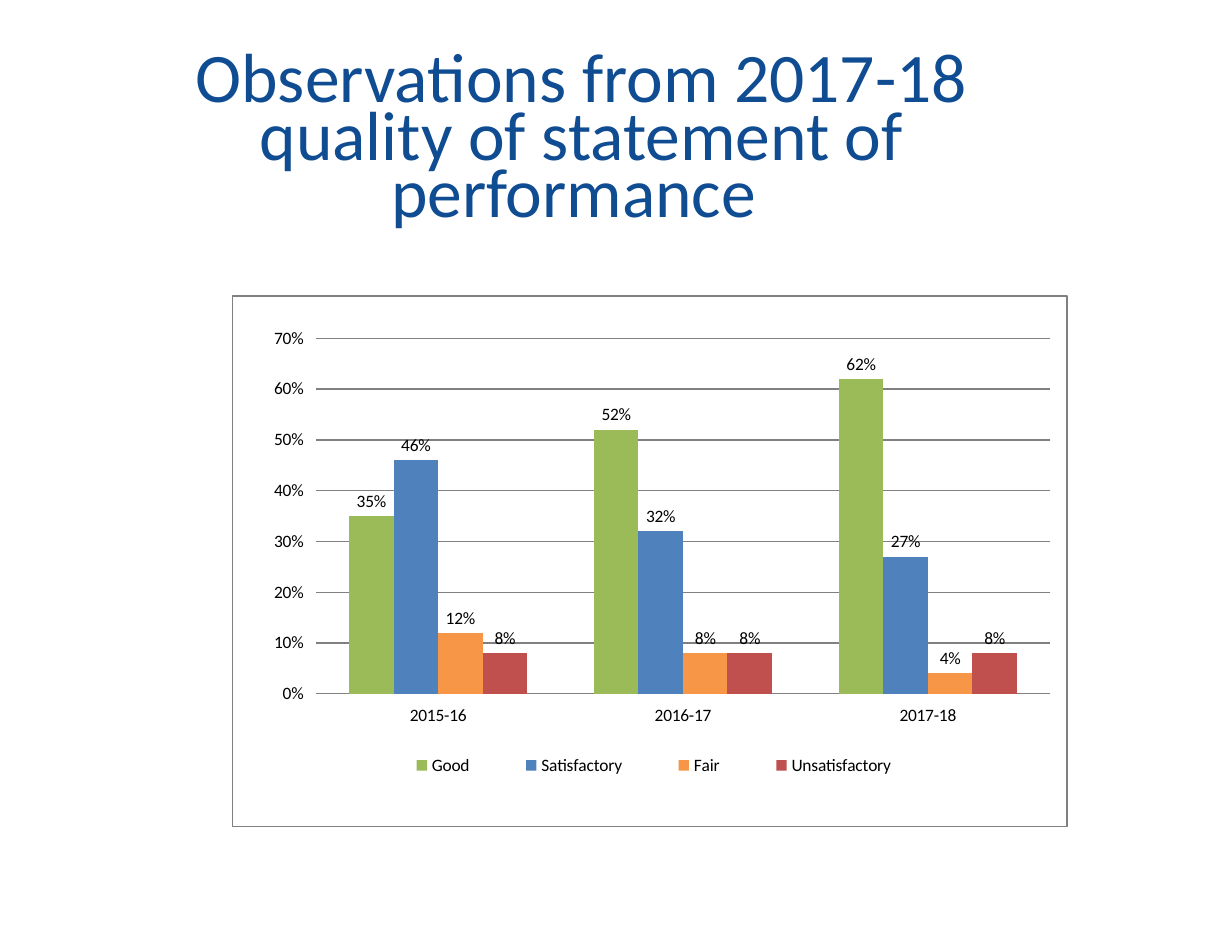
from lxml.etree import fromstring
from pptx import Presentation
from pptx.chart.data import CategoryChartData
from pptx.dml.color import RGBColor
from pptx.enum.chart import XL_CHART_TYPE, XL_LABEL_POSITION, XL_LEGEND_POSITION, XL_TICK_MARK
from pptx.enum.text import MSO_ANCHOR, MSO_AUTO_SIZE, PP_ALIGN
from pptx.oxml.ns import nsdecls
from pptx.util import Inches, Pt


def write_text(frame, text, size, color, line_spacing, space_after):
    frame.text = text
    paragraph = frame.paragraphs[0]
    paragraph.alignment = PP_ALIGN.CENTER
    paragraph.line_spacing = Pt(line_spacing)
    paragraph.space_before = Pt(0)
    paragraph.space_after = Pt(space_after)
    for run in paragraph.runs:
        run.font.name = "Calibri"
        run.font.size = Pt(size)
        run.font.color.rgb = RGBColor.from_string(color)


def manual_layout(x, y, w, h, target=""):
    return fromstring(
        f'<c:layout {nsdecls("c")}><c:manualLayout>{target}'
        '<c:xMode val="edge"/><c:yMode val="edge"/>'
        f'<c:x val="{x}"/><c:y val="{y}"/><c:w val="{w}"/><c:h val="{h}"/>'
        '</c:manualLayout></c:layout>'
    )


presentation = Presentation()
presentation.slide_width = Inches(25 / 2.54)
presentation.slide_height = Inches(19 / 2.54)
slide = presentation.slides.add_slide(presentation.slide_layouts[5])

title = slide.shapes.title
title.left, title.top = Inches(0.67), Inches(0.42)
title.width, title.height = Inches(7.95), Inches(1.51)
heading = title.text_frame
heading.word_wrap = True
heading.auto_size = MSO_AUTO_SIZE.SHAPE_TO_FIT_TEXT
heading.vertical_anchor = MSO_ANCHOR.TOP
heading.margin_left = heading.margin_right = Inches(0.09)
heading.margin_top = heading.margin_bottom = Inches(0.05)
write_text(heading, "Observations from 2017-18\vquality of statement of performance ",
           size=40, color="0F4C92", line_spacing=33.1, space_after=14.8)

ratings = [
    ("Good", (0.35, 0.52, 0.62), "9BBB59"),
    ("Satisfactory", (0.46, 0.32, 0.27), "4F81BD"),
    ("Fair", (0.12, 0.08, 0.04), "F79646"),
    ("Unsatisfactory", (0.08, 0.08, 0.08), "C0504D"),
]
rating_data = CategoryChartData(number_format="0%")
rating_data.categories = ["2015-16", "2016-17", "2017-18"]
for rating, shares, color in ratings:
    rating_data.add_series(rating, shares)
chart = slide.shapes.add_chart(
    XL_CHART_TYPE.COLUMN_CLUSTERED, Inches(1.85), Inches(2.36), Inches(6.68), Inches(4.25), rating_data
).chart
chart.has_title = False
chart.font.name = "Calibri"
chart.font.size = Pt(10)
chart.font.color.rgb = RGBColor.from_string("000000")

columns = chart.plots[0]
columns.gap_width = 150
columns.overlap = 0
columns.vary_by_categories = False
for series, (rating, shares, color) in zip(columns.series, ratings):
    series.format.fill.solid()
    series.format.fill.fore_color.rgb = RGBColor.from_string(color)
    labels = series.data_labels
    labels.show_value = True
    labels.number_format = "0%"
    labels.number_format_is_linked = False
    labels.position = XL_LABEL_POSITION.OUTSIDE_END

for axis in (chart.category_axis, chart.value_axis):
    axis.major_tick_mark = XL_TICK_MARK.OUTSIDE
    axis.minor_tick_mark = XL_TICK_MARK.NONE
    axis.format.line.fill.background()
share_axis = chart.value_axis
share_axis.minimum_scale = 0
share_axis.maximum_scale = 0.7
share_axis.major_unit = 0.1
share_axis.tick_labels.number_format = "0%"
share_axis.tick_labels.number_format_is_linked = False
share_axis.has_major_gridlines = True
gridline = share_axis.major_gridlines.format.line
gridline.width = Pt(0.75)
gridline.color.rgb = RGBColor.from_string("808080")

chart.has_legend = True
chart.legend.position = XL_LEGEND_POSITION.RIGHT
chart.legend.include_in_layout = False

chart_space = chart.element
for layout in chart_space.xpath("c:chart/c:plotArea/c:layout | c:chart/c:legend/c:layout"):
    layout.getparent().remove(layout)
plot_area = chart_space.xpath("c:chart/c:plotArea")[0]
plot_area.insert(0, manual_layout(0.1, 0.08, 0.88, 0.67, '<c:layoutTarget val="inner"/>'))
legend_position = chart_space.xpath("c:chart/c:legend/c:legendPos")[0]
legend_position.addnext(manual_layout(0.16, 0.85, 0.69, 0.07))
chart_space.xpath("c:chart")[0].addnext(fromstring(
    f'<c:spPr {nsdecls("c", "a")}><a:noFill/><a:ln w="{Pt(0.75)}"><a:solidFill>'
    '<a:srgbClr val="808080"/></a:solidFill></a:ln></c:spPr>'
))

presentation.save("out.pptx")
